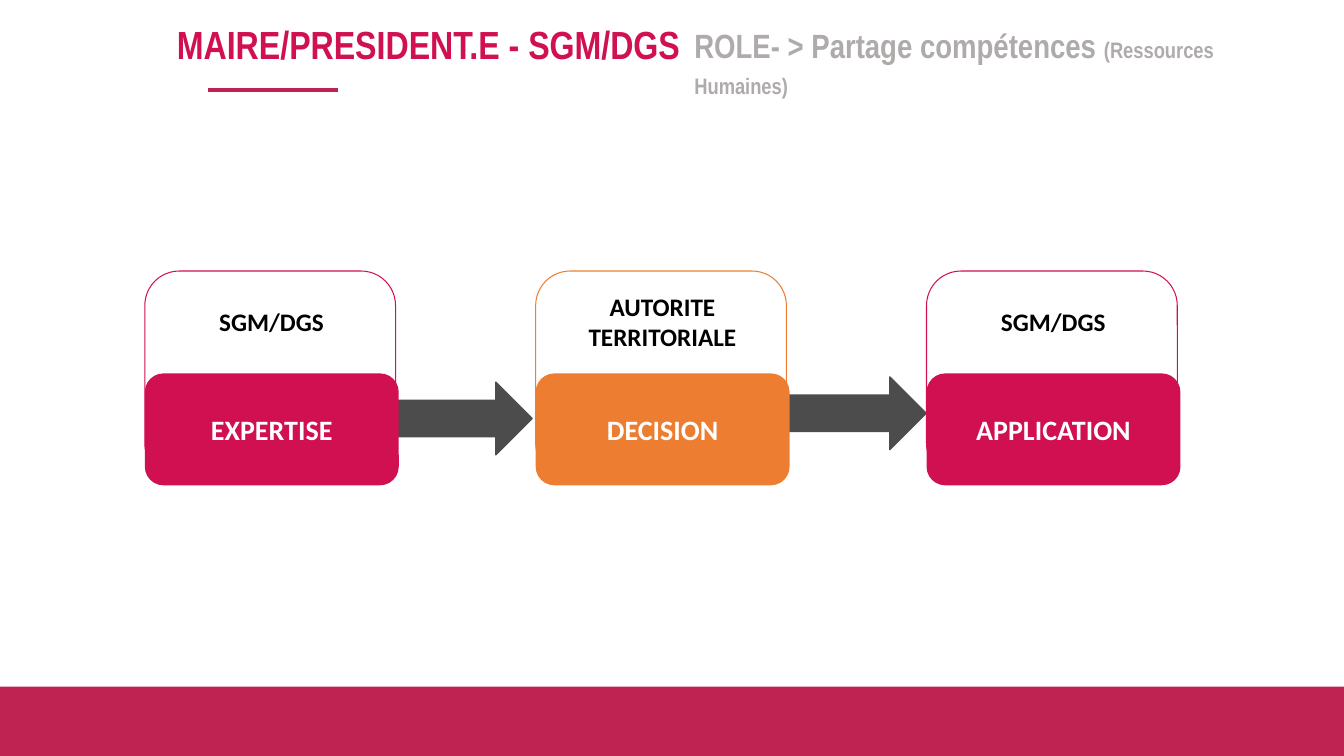
import pptx
import pptx.dml.color
import pptx.enum.shapes
import pptx.enum.text
import pptx.oxml.ns
import pptx.util
from lxml import etree

Cm = pptx.util.Cm
SHAPE = pptx.enum.shapes.MSO_SHAPE
CENTER = pptx.enum.text.PP_ALIGN.CENTER
LEFT = pptx.enum.text.PP_ALIGN.LEFT
MIDDLE = pptx.enum.text.MSO_ANCHOR.MIDDLE
TOP = pptx.enum.text.MSO_ANCHOR.TOP

COLORS = {
    "band": "BE2352",
    "crimson": "D01050",
    "orange": "ED7D31",
    "arrow": "4C4C4C",
    "grey": "AFABAB",
    "black": "000000",
    "white": "FFFFFF",
}


def rgb(name):
    return pptx.dml.color.RGBColor.from_string(COLORS[name])


class SlideBuilder:
    """Holds the shared style and the current slide."""

    heading_font = "Arial Narrow"
    card_font = "Calibri"

    def __init__(self, presentation):
        layout = presentation.slide_layouts.get_by_name("Title Only")
        self.slide = presentation.slides.add_slide(layout)

    def set_text(self, shape, runs, font, color, align=CENTER, anchor=MIDDLE, spacing=None):
        """Fill a shape with one bold paragraph of (text, size) runs."""
        frame = shape.text_frame
        frame_format = {
            "word_wrap": True,
            "auto_size": pptx.enum.text.MSO_AUTO_SIZE.NONE,
            "vertical_anchor": anchor,
        }
        for name, value in frame_format.items():
            setattr(frame, name, value)
        paragraph = frame.paragraphs[0]
        paragraph.alignment = align
        if spacing:
            paragraph.line_spacing = spacing
        for text, size in runs:
            run = paragraph.add_run()
            run.text = text
            run_format = {"name": font, "size": pptx.util.Pt(size), "bold": True}
            for name, value in run_format.items():
                setattr(run.font, name, value)
            run.font.color.rgb = rgb(color)

    def title(self, text, left, top, width, height):
        shape = self.slide.shapes.title
        position = {"left": left, "top": top, "width": width, "height": height}
        for name, value in position.items():
            setattr(shape, name, Cm(value))
        self.set_text(shape, [(text, 28)], self.heading_font, "crimson", spacing=0.9)

    def text(self, runs, left, top, width, height, **style):
        shape = self.slide.shapes.add_textbox(Cm(left), Cm(top), Cm(width), Cm(height))
        self.set_text(shape, runs, **style)

    def shape(self, kind, left, top, width, height, fill=None, line=None, weight=0.75):
        shape = self.slide.shapes.add_shape(kind, Cm(left), Cm(top), Cm(width), Cm(height))
        shape.shadow.inherit = False
        if fill:
            shape.fill.solid()
            shape.fill.fore_color.rgb = rgb(fill)
        else:
            shape.fill.background()
        if line:
            shape.line.color.rgb = rgb(line)
            shape.line.width = pptx.util.Pt(weight)
        else:
            shape.line.fill.background()
        return shape

    def rule(self, left, right, top, color, weight):
        line = self.slide.shapes.add_connector(
            pptx.enum.shapes.MSO_CONNECTOR.STRAIGHT, Cm(left), Cm(top), Cm(right), Cm(top))
        line.line.color.rgb = rgb(color)
        line.line.width = pptx.util.Pt(weight)
        properties = line._element.spPr
        etree.SubElement(properties, pptx.oxml.ns.qn("a:effectLst"))

    def arrow(self, left, top):
        self.shape(SHAPE.RIGHT_ARROW, left, top, 3.68, 1.83, "arrow", "arrow", 1)

    def card(self, left, actor, step, color):
        self.shape(SHAPE.ROUNDED_RECTANGLE, left, 6.83, 6.32, 5.21, line=color)
        tile = self.shape(SHAPE.ROUNDED_RECTANGLE, left, 9.41, 6.4, 2.82, fill=color)
        self.set_text(tile, [(step, 20)], self.card_font, "white")
        self.text([(actor, 18)], left + 0.53, 7.2, 5.33, 1.8,
                  font=self.card_font, color="black")


def main():
    presentation = pptx.Presentation()
    presentation.slide_width = Cm(33.87)
    presentation.slide_height = Cm(19.05)
    builder = SlideBuilder(presentation)

    # Footer band
    builder.shape(SHAPE.RECTANGLE, 0, 17.3, 33.87, 1.75, fill="band")

    # Heading
    builder.title("MAIRE/PRESIDENT.E - SGM/DGS", 2.44, 0.48, 16.71, 1.4)
    builder.rule(5.23, 8.51, 2.26, "band", 3)
    builder.text(
        [("ROLE- > Partage compétences ", 24), ("(Ressources Humaines)", 16), (" ", 24)],
        17.25, 0.61, 15.19, 1.7, font=builder.heading_font, color="grey",
        align=LEFT, anchor=TOP, spacing=0.9)

    # Arrows, tucked under the cards
    for left, top in ((9.73, 9.63), (19.66, 9.5)):
        builder.arrow(left, top)

    # Decision chain
    steps = [
        ("SGM/DGS", "EXPERTISE", "crimson"),
        ("AUTORITE TERRITORIALE", "DECISION", "orange"),
        ("SGM/DGS", "APPLICATION", "crimson"),
    ]
    for index, (actor, step, color) in enumerate(steps):
        builder.card(3.65 + 9.85 * index, actor, step, color)

    presentation.save("out.pptx")


if __name__ == "__main__":
    main()
